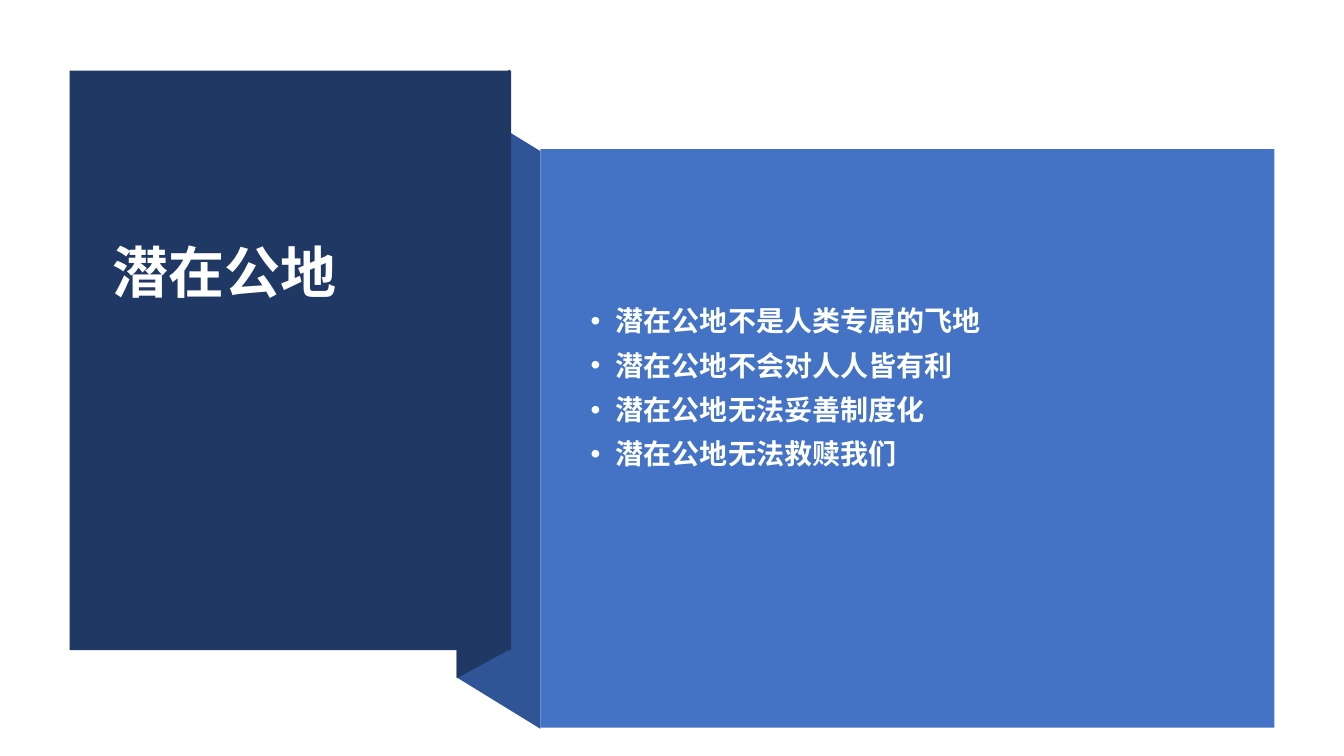
from lxml import etree
from pptx import Presentation
from pptx.dml.color import RGBColor
from pptx.enum.shapes import MSO_SHAPE
from pptx.enum.text import MSO_ANCHOR
from pptx.oxml.ns import qn
from pptx.util import Inches, Pt

TITLE = "潜在公地"
BULLETS = [
    "潜在公地不是人类专属的飞地",
    "潜在公地不会对人人皆有利",
    "潜在公地无法妥善制度化",
    "潜在公地无法救赎我们",
]

FONT = "Calibri"
NAVY = RGBColor(0x20, 0x38, 0x64)
MID_BLUE = RGBColor(0x2F, 0x55, 0x97)
BLUE = RGBColor(0x44, 0x72, 0xC4)
WHITE = RGBColor(0xFF, 0xFF, 0xFF)
OFF_WHITE = RGBColor(0xFE, 0xFF, 0xFF)
RECTANGLE = MSO_SHAPE.RECTANGLE
MIDDLE = MSO_ANCHOR.MIDDLE

# Ribbon folds: outline points in inches, fill
FOLDS = [
    ([(5.36, 7.23), (4.53, 6.72), (4.53, 0.99), (5.36, 1.5)], MID_BLUE),
    ([(5.06, 6.44), (4.53, 6.73), (4.53, 0.98), (5.06, 0.69)], NAVY),
]
# Panels: left, top, width, height in inches, fill
PANELS = [
    ((0.69, 0.7, 4.38, 5.75), NAVY),
    ((5.36, 1.48, 7.28, 5.74), BLUE),
]
TITLE_BOX = (1.02, 2.23, 3.71, 1)
BODY_BOX = (5.76, 2.86, 6.6, 2)


def paint(sp, color):
    sp.shadow.inherit = False
    sp.fill.solid()
    sp.fill.fore_color.rgb = color
    sp.line.fill.background()


def add_text(slide, box, lines, size, color, space_before=0, bullet=False):
    tf = slide.shapes.add_textbox(*map(Inches, box)).text_frame
    tf.word_wrap = True
    tf.vertical_anchor = MIDDLE
    for i, line in enumerate(lines):
        p = tf.add_paragraph() if i else tf.paragraphs[0]
        p.line_spacing = 0.9
        p.space_before = Pt(space_before)
        if bullet:
            pPr = p._p.get_or_add_pPr()
            pPr.set("marL", str(Inches(0.25)))
            pPr.set("indent", str(Inches(-0.25)))
            etree.SubElement(pPr, qn("a:buFont")).set("typeface", "Arial")
            etree.SubElement(pPr, qn("a:buChar")).set("char", "•")
        r = p.add_run()
        r.text = line
        r.font.name = FONT
        r.font.size = Pt(size)
        r.font.bold = True
        r.font.color.rgb = color
        etree.SubElement(r._r.get_or_add_rPr(), qn("a:ea")).set("typeface", FONT)


def main():
    prs = Presentation()
    prs.slide_width, prs.slide_height = Inches(13.33), Inches(7.5)
    slide = prs.slides.add_slide(prs.slide_layouts[6])

    for points, color in FOLDS:
        start, *rest = [(Inches(x), Inches(y)) for x, y in points]
        builder = slide.shapes.build_freeform(*start)
        builder.add_line_segments(rest, close=True)
        paint(builder.convert_to_shape(), color)
    for box, color in PANELS:
        paint(slide.shapes.add_shape(RECTANGLE, *map(Inches, box)), color)

    add_text(slide, TITLE_BOX, [TITLE], 40, WHITE)
    add_text(slide, BODY_BOX, BULLETS, 20, OFF_WHITE, space_before=10, bullet=True)
    prs.save("out.pptx")


if __name__ == "__main__":
    main()
